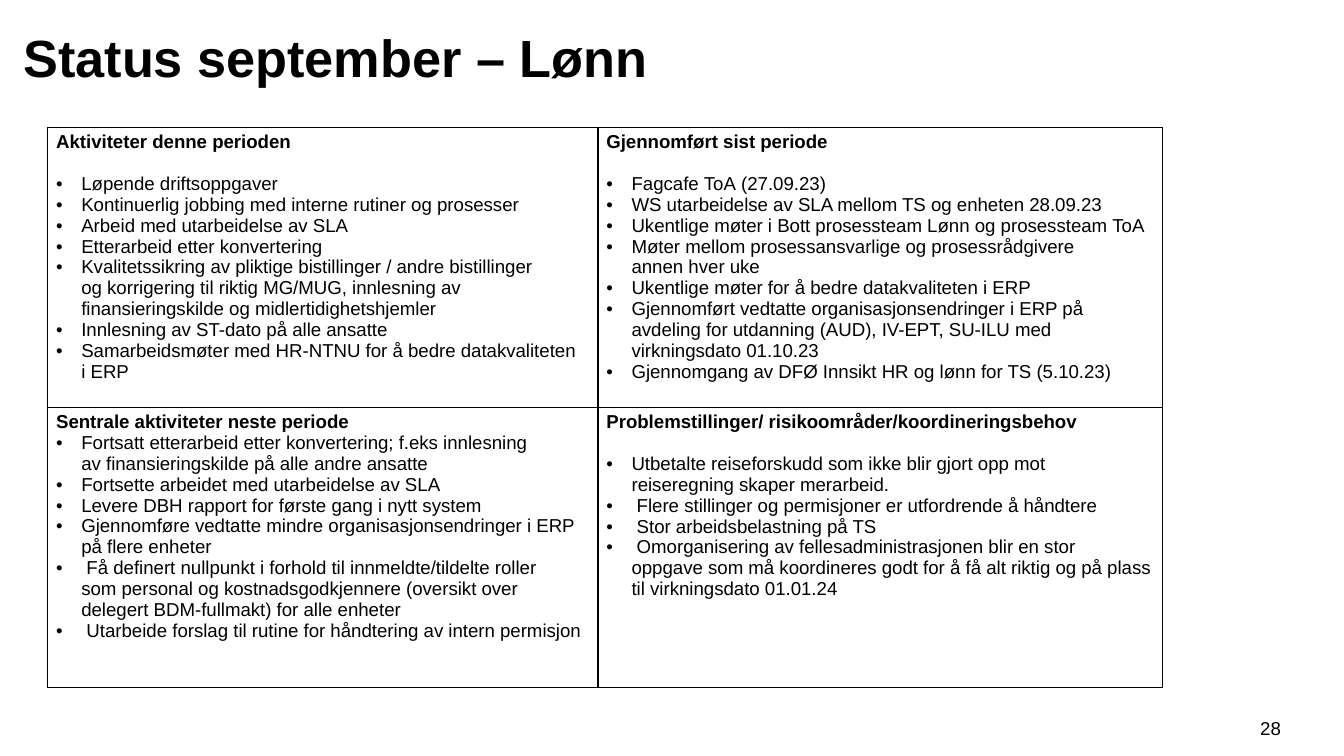
from dataclasses import dataclass

from lxml.etree import SubElement
from pptx import Presentation
from pptx.dml.color import RGBColor
from pptx.enum.text import MSO_ANCHOR as Anchor, PP_ALIGN as Align
from pptx.oxml.ns import qn
from pptx.util import Pt


@dataclass(frozen=True)
class Theme:
    font: str = "Arial"
    ink: str = "000000"
    title: float = 28
    body: float = 10
    line: float = 0.75
    indent: float = 13.5
    heading_gap: float = 11.2


# Each cell: heading, gap below the heading, bullets. "~" is a no-break space.
STATUS = [
    [
        ("Aktiviteter denne perioden", True, [
            "Løpende driftsoppgaver",
            "Kontinuerlig jobbing med interne rutiner og prosesser",
            "Arbeid med utarbeidelse av SLA",
            "Etterarbeid etter konvertering",
            "Kvalitetssikring av pliktige bistillinger / andre bistillinger og~korrigering "
            "til riktig MG/MUG, innlesning av finansieringskilde~og midlertidighetshjemler",
            "Innlesning av ST-dato på alle ansatte",
            "Samarbeidsmøter med HR-NTNU for å bedre datakvaliteten i~ERP",
        ]),
        ("Gjennomført sist periode", True, [
            "Fagcafe~ToA~(27.09.23)",
            "WS utarbeidelse av SLA mellom TS og enheten 28.09.23",
            "Ukentlige møter i Bott prosessteam Lønn og prosessteam~ToA",
            "Møter mellom prosessansvarlige og prosessrådgivere annen~hver uke",
            "Ukentlige møter for å bedre datakvaliteten i ERP",
            "Gjennomført vedtatte organisasjonsendringer i ERP på avdeling~for "
            "utdanning (AUD), IV-EPT, SU-ILU med virkningsdato~01.10.23",
            "Gjennomgang av DFØ Innsikt HR og lønn for TS (5.10.23)",
        ]),
    ],
    [
        ("Sentrale aktiviteter neste periode", False, [
            "Fortsatt etterarbeid etter konvertering;~f.eks~innlesning "
            "av~finansieringskilde på alle andre ansatte",
            "Fortsette arbeidet med utarbeidelse av SLA",
            "Levere DBH rapport for første gang i nytt system",
            "Gjennomføre vedtatte mindre organisasjonsendringer i ERP på~flere enheter",
            " Få definert nullpunkt i forhold til innmeldte/tildelte roller som~personal "
            "og~kostnadsgodkjennere~(oversikt over delegert BDM-fullmakt) for alle enheter",
            " Utarbeide forslag til rutine for håndtering av intern permisjon",
        ]),
        ("Problemstillinger/~risikoområder/koordineringsbehov", True, [
            "Utbetalte reiseforskudd som ikke blir gjort opp mot "
            "reiseregning~skaper merarbeid.",
            " Flere stillinger og permisjoner er utfordrende å håndtere",
            " Stor arbeidsbelastning på TS",
            " Omorganisering av fellesadministrasjonen blir en stor oppgave~som må "
            "koordineres godt for å få alt riktig og på plass til~virkningsdato 01.01.24",
        ]),
    ],
]


def write(p, text, *, theme, size, bold=False, align=Align.LEFT, bullet=False, after=0):
    pPr = p._p.get_or_add_pPr()
    p.alignment = align
    p.space_before = Pt(0)
    p.space_after = Pt(after)
    if bullet:
        pPr.set("marL", str(Pt(theme.indent)))
        pPr.set("indent", str(-Pt(theme.indent)))
        SubElement(pPr, qn("a:buFont"), typeface=theme.font)
        SubElement(pPr, qn("a:buChar"), char="•")
    r = p.add_run()
    r.text = text.replace("~", chr(160))
    r.font.name, r.font.size, r.font.bold = theme.font, Pt(size), bold
    r.font.color.rgb = RGBColor.from_string(theme.ink)


class Deck:
    def __init__(self, prs, theme):
        self.theme = theme
        self.s = prs.slides.add_slide(prs.slide_layouts[6])

    def text(self, text, x, y, w, h, **fmt):
        sp = self.s.shapes.add_textbox(Pt(x), Pt(y), Pt(w), Pt(h))
        tf = sp.text_frame
        tf.word_wrap = True
        tf.vertical_anchor = Anchor.MIDDLE
        write(tf.paragraphs[0], text, theme=self.theme, **fmt)

    def border(self, cell):
        tcPr = cell._tc.get_or_add_tcPr()
        for i, side in enumerate(("lnL", "lnR", "lnT", "lnB")):
            ln = tcPr.makeelement(qn(f"a:{side}"), {"w": str(Pt(self.theme.line))})
            fill = SubElement(ln, qn("a:solidFill"))
            SubElement(fill, qn("a:srgbClr"), val=self.theme.ink)
            tcPr.insert(i, ln)  # borders precede the fill

    def cell(self, cell, heading, gap, bullets):
        t = self.theme
        cell.margin_left = cell.margin_right = Pt(4.5)
        cell.margin_top = cell.margin_bottom = Pt(2.2)
        cell.fill.background()
        self.border(cell)
        tf = cell.text_frame
        write(tf.paragraphs[0], heading, theme=t, size=t.body, bold=True,
              after=t.heading_gap if gap else 0)
        for item in bullets:
            write(tf.add_paragraph(), item, theme=t, size=t.body, bullet=True)

    def table(self, rows, x, y, widths, row_h):
        table = self.s.shapes.add_table(
            len(rows), len(widths), Pt(x), Pt(y), Pt(sum(widths)), Pt(row_h * len(rows))
        ).table
        table.first_row = table.horz_banding = False
        for col, w in zip(table.columns, widths):
            col.width = Pt(w)
        for i, row in enumerate(rows):
            table.rows[i].height = Pt(row_h)
            for j, content in enumerate(row):
                self.cell(table.cell(i, j), *content)


def main():
    prs = Presentation()
    prs.slide_width, prs.slide_height = Pt(720), Pt(405)
    theme = Theme()
    deck = Deck(prs, theme)
    deck.text("28", 667.4, 379.4, 26.6, 21.6, size=theme.body, align=Align.CENTER)
    deck.text("Status september – Lønn", 5.5, 10, 660, 41, size=theme.title, bold=True)
    deck.table(STATUS, 25.6, 68.5, (294.8, 302.4), 150)
    prs.save("out.pptx")


if __name__ == "__main__":
    main()
